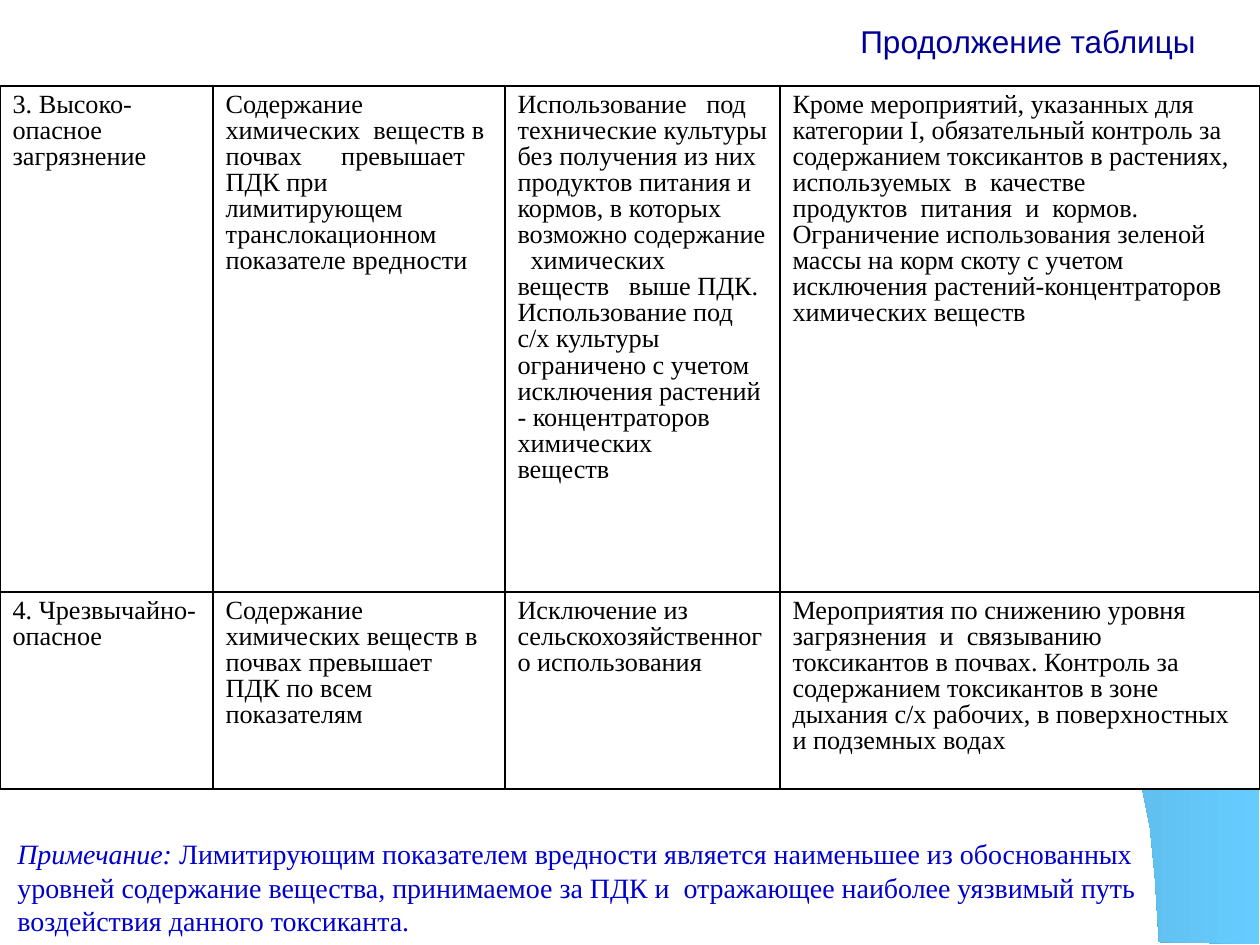
from lxml import etree
from pptx import Presentation
from pptx import util as u
from pptx.dml.color import RGBColor
from pptx.enum import text
from pptx.oxml.ns import qn

PX = 914400 / 126
SERIF = "Times New Roman"
TITLE = "Продолжение таблицы"
NOTE = ("Примечание: ",
        "Лимитирующим показателем вредности является наименьшее из обоснованных "
        "уровней содержание вещества, принимаемое за ПДК и  отражающее наиболее "
        "уязвимый путь воздействия данного токсиканта.")

COLUMNS = [213, 292, 275, 480]
ROW_HEIGHTS = [506, 197]
# Each cell is a list of paragraphs
ROWS = [
    [
        ["3. Высоко-", "опасное загрязнение"],
        ["Содержание      химических  веществ в почвах      превышает ПДК при "
         "лимитирующем   транслокационном показателе вредности"],
        ["Использование   под технические культуры без получения из них продуктов "
         "питания и кормов, в которых возможно содержание   химических  веществ   "
         "выше ПДК.  Использование под с/х культуры ограничено с учетом   "
         "исключения растений - концентраторов химических",
         "веществ"],
        ["Кроме мероприятий, указанных для категории I, обязательный контроль за "
         "содержанием токсикантов в растениях,   используемых  в  качестве",
         "продуктов  питания  и  кормов.   Ограничение использования зеленой массы "
         "на корм скоту с учетом исключения растений-концентраторов",
         "химических веществ"],
    ],
    [
        ["4. Чрезвычайно-опасное"],
        ["Содержание      химических веществ в почвах превышает ПДК по всем "
         "показателям"],
        ["Исключение из", "сельскохозяйственного использования"],
        ["Мероприятия по снижению уровня загрязнения  и  связыванию  токсикантов "
         "в почвах. Контроль за содержанием токсикантов в зоне дыхания с/х "
         "рабочих, в поверхностных и подземных водах"],
    ],
]

SWOOSH = [(1159, 942), (1259, 944), (1259, 533), (742, 218), (786, 251),
          (823, 280), (863, 315), (902, 353), (960, 416), (1012, 484),
          (1048, 543), (1081, 604), (1106, 665), (1125, 721), (1138, 767),
          (1150, 827), (1155, 877)]


def px(length):
    return u.Emu(round(length * PX))


def color(value):
    return RGBColor.from_string(value)


def style(span, size, font, value, italic=False):
    span.font.size = u.Pt(size)
    span.font.name = font
    span.font.color.rgb = color(value)
    span.font.italic = italic


def add_box(page, left, top, width, height):
    frame = page.shapes.add_textbox(*map(px, (left, top, width, height))).text_frame
    frame.word_wrap = True
    frame.vertical_anchor = text.MSO_ANCHOR.MIDDLE
    return frame


def add_borders(cell):
    properties = cell._tc.get_or_add_tcPr()
    for side in ("lnL", "lnR", "lnT", "lnB"):
        line = etree.SubElement(properties, qn(f"a:{side}"), w=str(u.Pt(1)))
        fill = etree.SubElement(line, qn("a:solidFill"))
        etree.SubElement(fill, qn("a:srgbClr"), val="000000")


def add_swoosh(page):
    builder = page.shapes.build_freeform(*SWOOSH[0], scale=PX)
    builder.add_line_segments(SWOOSH[1:], close=True)
    shape = builder.convert_to_shape()
    shape.shadow.inherit = False
    shape.line.fill.background()
    shape.fill.gradient()
    shape.fill.gradient_angle = 0
    for stop, value, position in zip(shape.fill.gradient_stops,
                                     ("4992B6", "66CCFF"), (0, 1)):
        stop.color.rgb = color(value)
        stop.position = position


def add_measures_table(page):
    table = page.shapes.add_table(
        len(ROWS), len(COLUMNS), 0, px(86),
        px(sum(COLUMNS)), px(sum(ROW_HEIGHTS))).table
    table.first_row = table.horz_banding = False
    for column, width in zip(table.columns, COLUMNS):
        column.width = px(width)
    for row, height, contents in zip(table.rows, ROW_HEIGHTS, ROWS):
        row.height = px(height)
        for cell, paragraphs in zip(row.cells, contents):
            cell.text_frame.text = "\n".join(paragraphs)
            for para in cell.text_frame.paragraphs:
                para.line_spacing = 0.9
                style(para.runs[0], 15, SERIF, "000000")
            add_borders(cell)
            cell.fill.solid()
            cell.fill.fore_color.rgb = color("FFFFFF")


def main():
    deck = Presentation()
    deck.slide_width, deck.slide_height = px(1260), px(945)
    page = deck.slides.add_slide(deck.slide_layouts[6])

    add_swoosh(page)

    para = add_box(page, 94, 27, 1114, 27).paragraphs[0]
    para.text = TITLE
    para.alignment = text.PP_ALIGN.RIGHT
    style(para.runs[0], 18, "Arial", "000099")

    add_measures_table(page)

    para = add_box(page, 5, 830, 1235, 114).paragraphs[0]
    for words, italic in zip(NOTE, (True, False)):
        span = para.add_run()
        span.text = words
        style(span, 16, SERIF, "0000CC", italic)

    deck.save("out.pptx")


if __name__ == "__main__":
    main()
